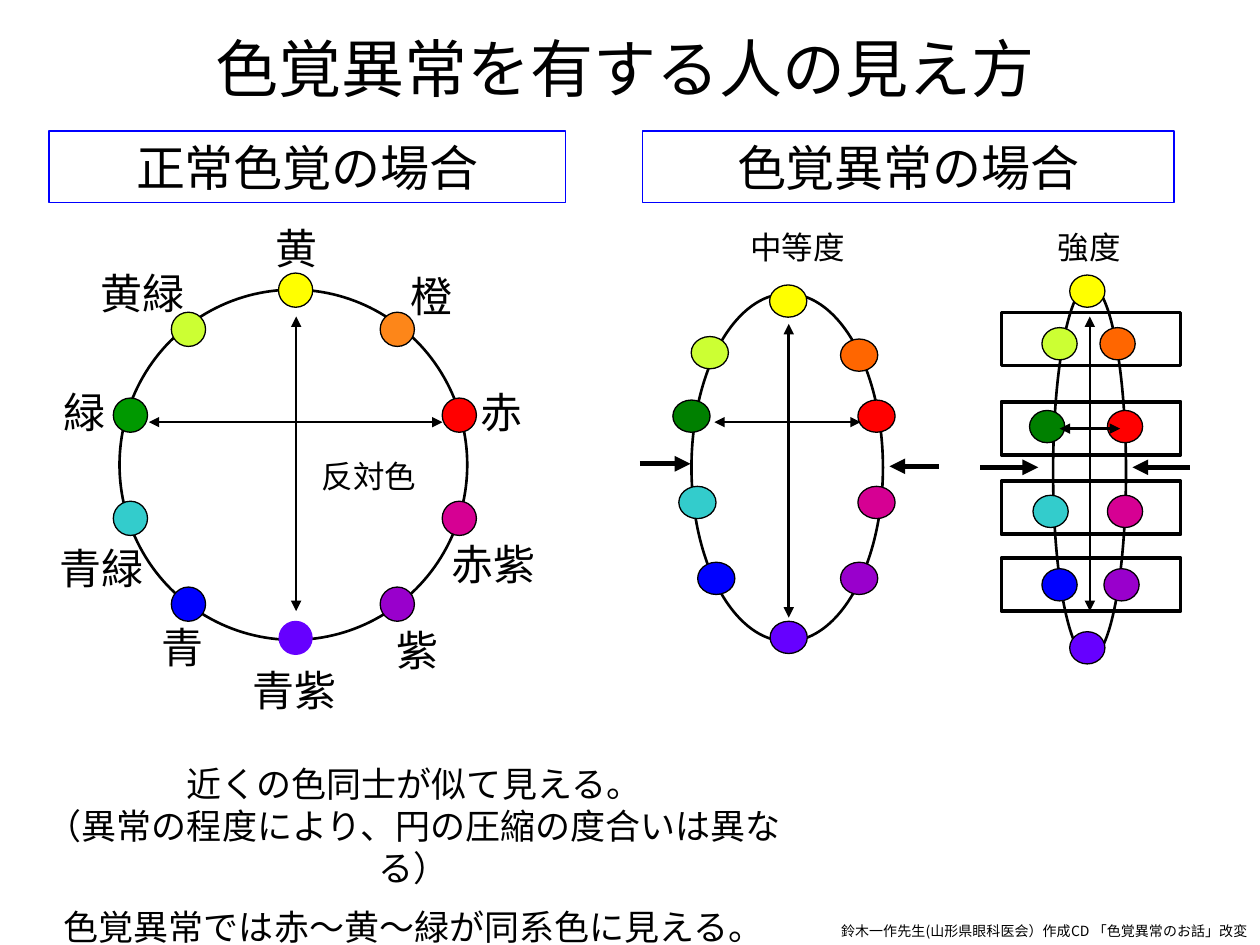
from dataclasses import dataclass, field
from typing import Optional

from lxml import etree
from pptx import Presentation, util as u
from pptx.dml.color import RGBColor
from pptx.enum import shapes, text
from pptx.oxml.ns import qn

Point = tuple[float, float]
Box = tuple[float, float, float, float]


@dataclass(frozen=True)
class Theme:
    ink: str = "000000"
    heading_line: str = "0000FF"
    body_font: str = "Arial"
    label_font: str = "Times New Roman"
    heading_font: str = "Cambria"
    credit_font: str = "Noto Sans CJK JP"
    title: int = 36
    heading: int = 28
    label: int = 24
    body: int = 20
    caption: int = 18
    credit: int = 8
    hairline: float = 0.75
    line: float = 1.5
    frame: float = 2.25
    bold_line: float = 3
    hues: dict[str, str] = field(default_factory=lambda: {
        "yellow": "FFFF00", "orange": "FF6600", "red": "FF0000",
        "magenta": "D60093", "purple": "9900CC", "violet": "6600FF",
        "blue": "0000FF", "teal": "33CCCC", "green": "008000", "lime": "CCFF33",
    })


@dataclass(frozen=True)
class Ring:
    outline: Box
    dot_size: Point
    dots: list[Point]
    axes: list[tuple[Point, Point]]
    squeezes: list[tuple[Point, Point]] = field(default_factory=list)
    recoloured: dict[str, str] = field(default_factory=dict)
    borderless: str = ""


@dataclass(frozen=True)
class Label:
    words: str
    center: float
    top: float


THEME = Theme()

NORMAL = Ring(
    (2.41, 5.84, 7.01, 7.06), (0.69, 0.69),
    [(5.96, 5.85), (8.01, 6.64), (9.26, 8.37), (9.26, 10.45), (8.01, 12.18),
     (5.96, 12.86), (3.8, 12.18), (2.63, 10.45), (2.63, 8.37), (3.8, 6.64)],
    [((3, 8.51), (8.92, 8.51)), ((5.97, 6.38), (5.97, 12.32))],
    recoloured={"orange": "FD8619", "green": "009900"}, borderless="violet",
)
MODERATE = Ring(
    (13.94, 5.92, 3.86, 7.01), (0.75, 0.65),
    [(15.89, 6.07), (17.32, 7.16), (17.67, 8.39), (17.67, 10.13), (17.32, 11.66),
     (15.9, 12.85), (14.44, 11.66), (14.06, 10.13), (13.94, 8.39), (14.31, 7.11)],
    [((14.4, 8.51), (17.35, 8.51)), ((15.9, 6.53), (15.9, 12.45))],
    [((12.9, 9.35), (13.92, 9.35)), ((18.92, 9.4), (17.93, 9.4))],
)
SEVERE = Ring(
    (21.23, 5.74, 1.47, 7.54), (0.71, 0.65),
    [(21.92, 5.87), (22.53, 6.93), (22.68, 8.6), (22.68, 10.31), (22.61, 11.79),
     (21.92, 13.06), (21.36, 11.79), (21.18, 10.31), (21.11, 8.6), (21.36, 6.93)],
    [((21.36, 8.64), (22.58, 8.64)), ((21.97, 6.38), (21.97, 12.32))],
    [((19.76, 9.42), (20.93, 9.42)), ((23.98, 9.42), (22.83, 9.42))],
)
HUE_LABELS = [
    Label("黄", 5.98, 4.37), Label("橙", 8.69, 5.33), Label("赤", 10.12, 7.67),
    Label("赤紫", 9.94, 10.74), Label("紫", 8.42, 12.47), Label("青紫", 5.93, 13.28),
    Label("青", 3.67, 12.4), Label("青緑", 2.04, 10.82), Label("緑", 1.71, 7.67),
    Label("黄緑", 2.88, 5.26),
]
CAPTIONS = [Label("中等度", 16.08, 4.47), Label("強度", 21.96, 4.47), Label("反対色", 7.44, 9.09)]
HEADINGS = [("正常色覚の場合", 0.99, 10.41), ("色覚異常の場合", 12.95, 10.72)]
CONFUSED_PAIR_TOPS = [6.3, 8.1, 9.7, 11.25]
EXPLANATION = [
    "近くの色同士が似て見える。",
    "（異常の程度により、円の圧縮の度合いは異なる）",
    "色覚異常では赤～黄～緑が同系色に見える。",
]


def lengths(values) -> list[u.Length]:
    return [u.Cm(value) for value in values]


def write(shape, lines: list[str], size: int, font: str, wrap: bool = True,
          align=text.PP_ALIGN.CENTER, anchor=text.MSO_ANCHOR.TOP) -> None:
    frame = shape.text_frame
    frame.word_wrap = wrap
    frame.vertical_anchor = anchor
    frame.text = "\n".join(lines)
    for paragraph in frame.paragraphs:
        paragraph.alignment = align
        paragraph.font.size = u.Pt(size)
        paragraph.font.name = font
        paragraph.font.color.rgb = RGBColor.from_string(THEME.ink)


def add_text(slide, box: Box, lines: list[str], size: int, font: str, **layout):
    holder = slide.shapes.add_textbox(*lengths(box))
    write(holder, lines, size, font, **layout)
    return holder


def add_outline(slide, kind, box: Box, width: float, fill: Optional[str] = None,
                colour: str = THEME.ink):
    shape = slide.shapes.add_shape(kind, *lengths(box))
    shape.shadow.inherit = False
    if fill:
        shape.fill.solid()
        shape.fill.fore_color.rgb = RGBColor.from_string(fill)
    else:
        shape.fill.background()
    if width:
        shape.line.width = u.Pt(width)
        shape.line.color.rgb = RGBColor.from_string(colour)
    else:
        shape.line.fill.background()
    return shape


def add_arrow(slide, start: Point, end: Point, width: float, double: bool) -> None:
    arrow = slide.shapes.add_connector(shapes.MSO_CONNECTOR.STRAIGHT, *lengths(start + end))
    arrow.line.width = u.Pt(width)
    arrow.line.color.rgb = RGBColor.from_string(THEME.ink)
    line = arrow.line._get_or_add_ln()
    for tip in ("a:headEnd", "a:tailEnd") if double else ("a:tailEnd",):
        etree.SubElement(line, qn(tip), type="triangle")
    etree.SubElement(arrow._element.spPr, qn("a:effectLst"))


def add_ring(slide, ring: Ring) -> None:
    oval = shapes.MSO_SHAPE.OVAL
    add_outline(slide, oval, ring.outline, THEME.line)
    width, height = ring.dot_size
    hues = THEME.hues | ring.recoloured
    for (hue, colour), (x, y) in zip(hues.items(), ring.dots):
        border = 0 if hue == ring.borderless else THEME.hairline
        add_outline(slide, oval, (x - width / 2, y - height / 2, width, height), border, colour)
    for start, end in ring.axes:
        add_arrow(slide, start, end, THEME.line, double=True)
    for start, end in ring.squeezes:
        add_arrow(slide, start, end, THEME.bold_line, double=False)


def main() -> None:
    deck = Presentation()
    deck.slide_width, deck.slide_height = lengths((25.4, 19.05))
    slide = deck.slides.add_slide(deck.slide_layouts[6])
    rectangle = shapes.MSO_SHAPE.RECTANGLE
    middle = text.MSO_ANCHOR.MIDDLE

    add_text(slide, (1.17, -0.23, 22.86, 3.18), ["色覚異常を有する人の見え方"],
             THEME.title, THEME.body_font, anchor=middle)
    for words, left, width in HEADINGS:
        heading = add_outline(slide, rectangle, (left, 2.64, width, 1.45),
                              THEME.hairline, colour=THEME.heading_line)
        write(heading, [words], THEME.heading, THEME.heading_font, anchor=middle)

    for top in CONFUSED_PAIR_TOPS:
        add_outline(slide, rectangle, (20.19, top, 3.61, 1.07), THEME.frame)
    for ring in (NORMAL, MODERATE, SEVERE):
        add_ring(slide, ring)

    for label in HUE_LABELS:
        width = 0.5 + 0.85 * len(label.words)
        add_text(slide, (label.center - width / 2, label.top, width, 1.27),
                 [label.words], THEME.label, THEME.label_font, wrap=False)
    for caption in CAPTIONS:
        add_text(slide, (caption.center - 1.27, caption.top, 2.54, 1.02),
                 [caption.words], THEME.caption, THEME.body_font)

    explanation = add_text(slide, (0.56, 15.24, 15.57, 3.25), EXPLANATION,
                           THEME.body, THEME.body_font)
    explanation.text_frame.paragraphs[-1].space_before = u.Pt(THEME.body / 2)
    add_text(slide, (16.41, 18.47, 8.99, 0.61),
             ["鈴木一作先生(山形県眼科医会）作成CD 「色覚異常のお話」改変"],
             THEME.credit, THEME.credit_font, align=text.PP_ALIGN.RIGHT)
    deck.save("out.pptx")


if __name__ == "__main__":
    main()
